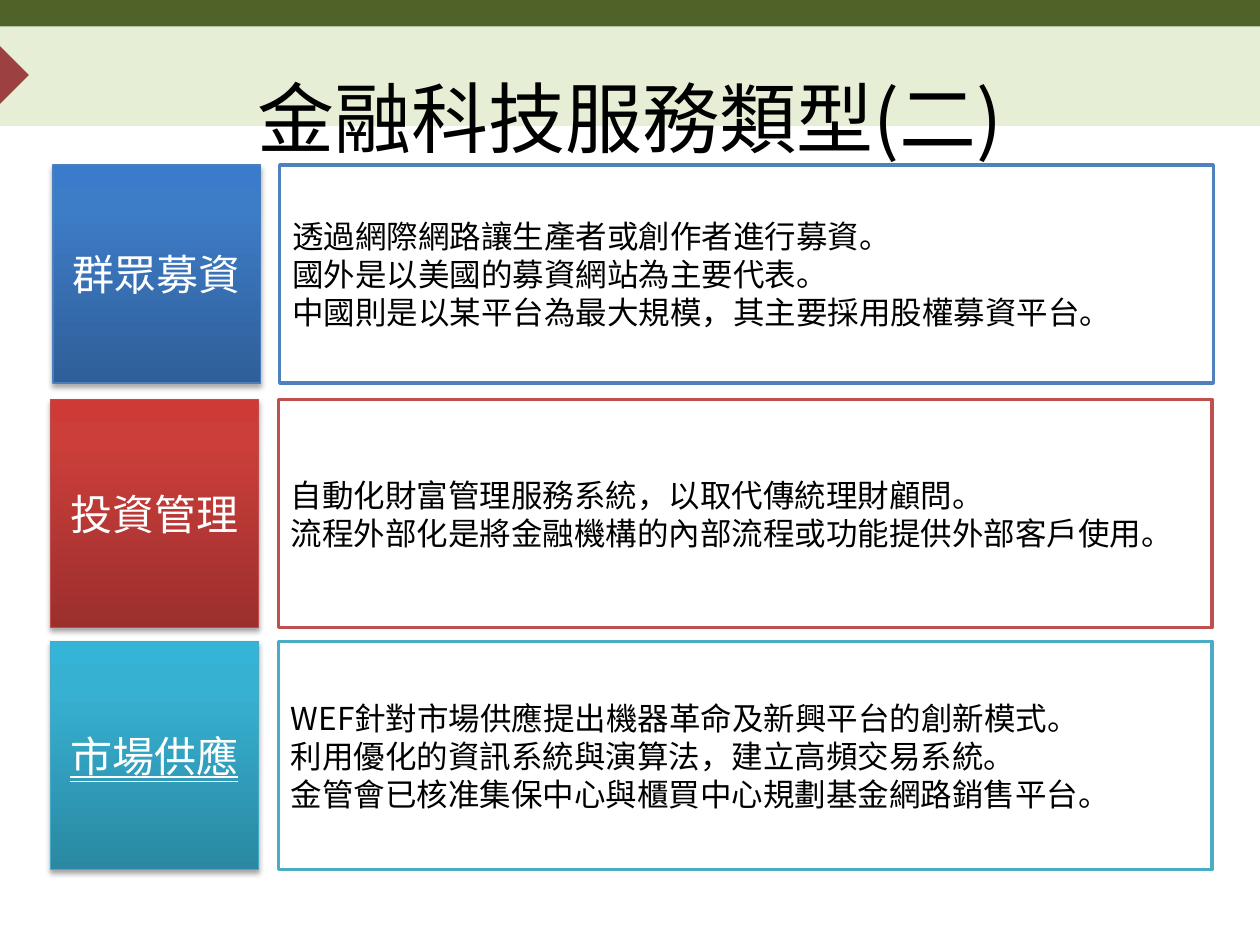
import pptx
import pptx.util
import pptx.dml.color
import pptx.enum.shapes
import pptx.enum.text
import pptx.oxml
import pptx.oxml.ns
from pptx.util import Inches

FONT = "Noto Sans CJK SC"
COLORS = {
    "band": "E6EFD5", "top": "4F6228", "marker": "9C4042",
    "black": "000000", "white": "FFFFFF",
}
# Gradient stops run from the bottom of the label to its top.
THEMES = {
    "blue": {"stops": ("2F5F99", "3D7CC7", "3A7CCB"), "edge": "4B7EBC", "frame": "4F81BD"},
    "red": {"stops": ("9C2F2D", "CB3E3A", "CE3B37"), "edge": "BF4C48", "frame": "C0504D"},
    "aqua": {"stops": ("2A88A2", "37B1D2", "34B4D6"), "edge": "46AAC5", "frame": "4BACC6"},
}
STOP_POSITIONS = (0, 80, 100)
NS = pptx.oxml.ns.nsdecls("a")
ALIGN = pptx.enum.text.PP_ALIGN
DOUBLE = pptx.enum.text.MSO_UNDERLINE.DOUBLE_LINE


def rgb(value):
    return pptx.dml.color.RGBColor.from_string(value)


def write(sp, *lines, size=18, color="black", align=ALIGN.LEFT, underline=None, spacing=None):
    """Fill a shape with one vertically centred paragraph per line."""
    tf = sp.text_frame
    tf.word_wrap = True
    tf.vertical_anchor = pptx.enum.text.MSO_ANCHOR.MIDDLE
    for i, line in enumerate(lines):
        p = tf.add_paragraph() if i else tf.paragraphs[0]
        p.alignment = align
        if spacing:
            p.line_spacing = pptx.util.Pt(spacing)
        r = p.add_run()
        r.text = line
        r.font.size = pptx.util.Pt(size)
        r.font.name = FONT
        r.font.color.rgb = rgb(COLORS[color])
        r.font.underline = underline
        r.font._element.append(pptx.oxml.parse_xml(f'<a:ea {NS} typeface="{FONT}"/>'))


class Deck:
    def __init__(self):
        self.prs = pptx.Presentation()
        self.prs.slide_width, self.prs.slide_height = Inches(10), Inches(7.5)
        self.s = self.prs.slides.add_slide(self.prs.slide_layouts[6])

    def rect(self, x, y, w, h, fill=None, line=None, width=1.0):
        sp = self.s.shapes.add_shape(
            pptx.enum.shapes.MSO_SHAPE.RECTANGLE, Inches(x), Inches(y), Inches(w), Inches(h))
        if fill:
            sp.fill.solid()
            sp.fill.fore_color.rgb = rgb(fill)
        if line:
            sp.line.color.rgb = rgb(line)
            sp.line.width = pptx.util.Pt(width)
        else:
            sp.line.fill.background()
        sp.shadow.inherit = False
        return sp

    def title(self, text):
        tb = self.s.shapes.add_textbox(Inches(0.5), Inches(0.3), Inches(9), Inches(1.25))
        write(tb, text, size=44, align=ALIGN.CENTER)

    def label(self, text, x, y, w, h, theme, underline=None):
        """Add a gradient box with a soft shadow below it."""
        sp = self.rect(x, y, w, h, line=theme["edge"], width=0.75)
        sp.fill.gradient()
        sp.fill.gradient_angle = 90
        stops = sp._element.spPr.find(".//" + pptx.oxml.ns.qn("a:gsLst"))
        for old in list(stops):
            stops.remove(old)
        for pos, color in zip(STOP_POSITIONS, theme["stops"]):
            stops.append(pptx.oxml.parse_xml(
                f'<a:gs {NS} pos="{pos * 1000}"><a:srgbClr val="{color}"/></a:gs>'))
        effects = sp._element.spPr.find(pptx.oxml.ns.qn("a:effectLst"))
        effects.append(pptx.oxml.parse_xml(
            f'<a:outerShdw {NS} blurRad="{pptx.util.Pt(3.1)}" dist="{pptx.util.Pt(1.8)}" '
            'dir="5400000" rotWithShape="0"><a:srgbClr val="000000">'
            '<a:alpha val="35000"/></a:srgbClr></a:outerShdw>'))
        write(sp, text, size=24, color="white", align=ALIGN.CENTER, underline=underline)

    def detail(self, lines, x, y, w, h, theme):
        sp = self.rect(x, y, w, h, COLORS["white"], theme["frame"], 2)
        write(sp, *lines, spacing=21.75)


ROWS = [
    ("群眾募資", "blue", 0.42, 2.22, 1.31, 1.73, None, [
        "透過網際網路讓生產者或創作者進行募資。",
        "國外是以美國的募資網站為主要代表。",
        "中國則是以某平台為最大規模，其主要採用股權募資平台。"]),
    ("投資管理", "red", 0.4, 2.21, 3.17, 1.81, None, [
        "自動化財富管理服務系統，以取代傳統理財顧問。",
        "流程外部化是將金融機構的內部流程或功能提供外部客戶使用。"]),
    ("市場供應", "aqua", 0.4, 2.21, 5.09, 1.81, DOUBLE, [
        "WEF針對市場供應提出機器革命及新興平台的創新模式。",
        "利用優化的資訊系統與演算法，建立高頻交易系統。",
        "金管會已核准集保中心與櫃買中心規劃基金網路銷售平台。"]),
]


def main():
    deck = Deck()
    deck.rect(0, 0.21, 10.01, 0.79, COLORS["band"])
    deck.rect(0, 0, 10.01, 0.21, COLORS["top"])
    deck.rect(-0.41, 0.33, 0.53, 0.53, COLORS["marker"]).rotation = 315
    deck.title("金融科技服務類型(二)")
    for name, theme, label_x, detail_x, y, h, underline, lines in ROWS:
        deck.label(name, label_x, y, 1.65, h, THEMES[theme], underline)
        deck.detail(lines, detail_x, y, 7.41, h, THEMES[theme])
    deck.prs.save("out.pptx")


if __name__ == "__main__":
    main()
